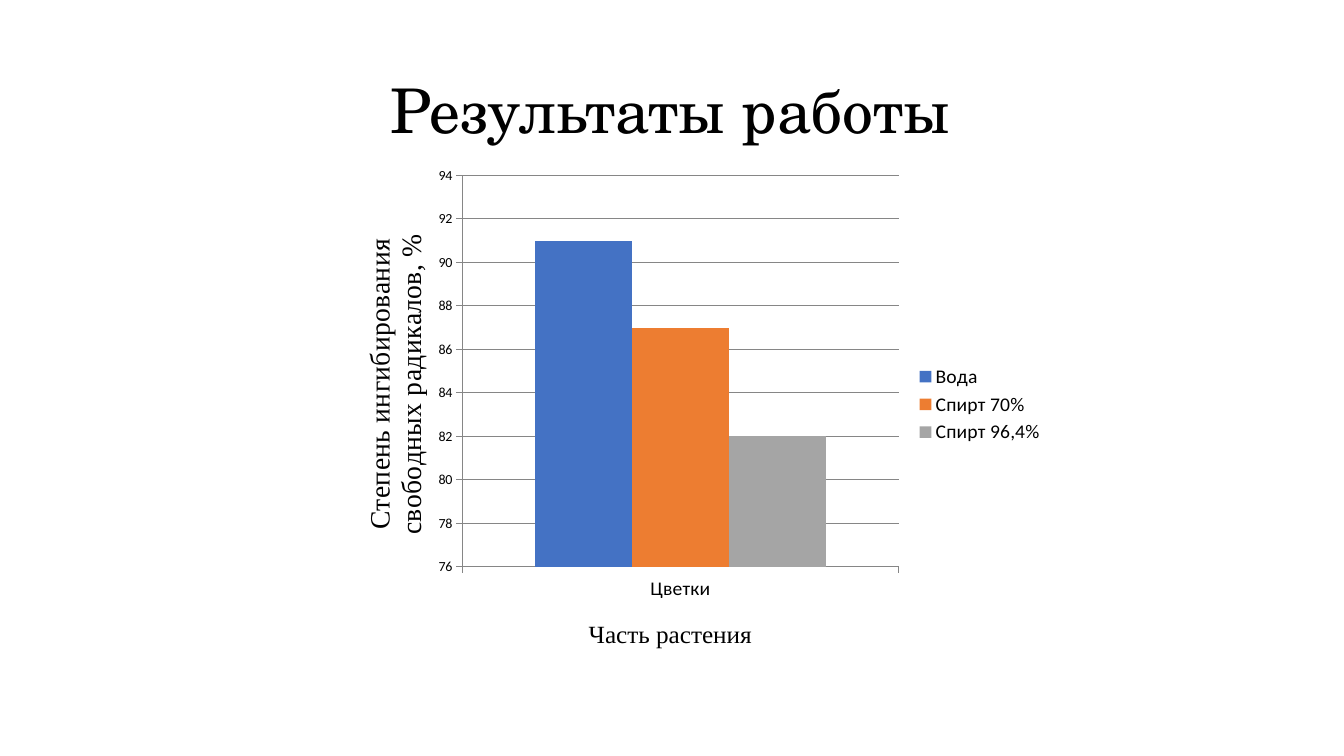
from lxml import etree
from pptx import Presentation
from pptx.chart.data import CategoryChartData
from pptx.dml.color import RGBColor
from pptx.enum.chart import XL_CHART_TYPE, XL_LEGEND_POSITION, XL_TICK_MARK
from pptx.enum.text import MSO_ANCHOR, PP_ALIGN
from pptx.oxml.ns import qn
from pptx.util import Inches, Pt

COLUMNS = XL_CHART_TYPE.COLUMN_CLUSTERED
LEGEND_RIGHT = XL_LEGEND_POSITION.RIGHT
TICK_OUTSIDE = XL_TICK_MARK.OUTSIDE
MIDDLE = MSO_ANCHOR.MIDDLE
CENTER = PP_ALIGN.CENTER

BLACK = RGBColor(0x00, 0x00, 0x00)
GRAY = RGBColor(0x86, 0x86, 0x86)
BLUE = RGBColor(0x44, 0x72, 0xC4)
ORANGE = RGBColor(0xED, 0x7D, 0x31)
SILVER = RGBColor(0xA5, 0xA5, 0xA5)

TITLE = "Результаты работы"
CATEGORIES = ["Цветки"]
SERIES = [
    ("Вода", [91], BLUE),
    ("Спирт 70%", [87], ORANGE),
    ("Спирт 96,4%", [82], SILVER),
]
CATEGORY_TITLE = "Часть растения"
VALUE_TITLE = "Степень ингибирования свободных радикалов, %"


def style_font(font, name, size):
    font.name = name
    font.size = Pt(size)
    font.bold = False
    font.color.rgb = BLACK


def set_layout(parent, index, **settings):
    """Give a chart part a manual layout as fractions of the chart."""
    for old in parent.findall(qn("c:layout")):
        parent.remove(old)
    layout = etree.Element(qn("c:layout"))
    manual = etree.SubElement(layout, qn("c:manualLayout"))
    for name, value in settings.items():
        etree.SubElement(manual, qn(f"c:{name}")).set("val", str(value))
    parent.insert(index, layout)


def style_axis(axis, title, title_size, label_size, x, y):
    axis.major_tick_mark = TICK_OUTSIDE
    axis.format.line.color.rgb = GRAY
    axis.format.line.width = Pt(0.75)
    style_font(axis.tick_labels.font, "Calibri", label_size)
    frame = axis.axis_title.text_frame
    frame.text = title
    style_font(frame.paragraphs[0].runs[0].font, "Times New Roman", title_size)
    set_layout(axis.axis_title._element, 1, xMode="edge", yMode="edge", x=x, y=y)


def add_title(page):
    box = page.shapes.add_textbox(Inches(0.9), Inches(0.4), Inches(11.5), Inches(1.45))
    frame = box.text_frame
    frame.word_wrap = True
    frame.vertical_anchor = MIDDLE
    frame.text = TITLE
    para = frame.paragraphs[0]
    para.alignment = CENTER
    para.line_spacing = 0.9
    style_font(para.runs[0].font, "TeX Gyre Schola", 44)


def add_results_chart(page):
    data = CategoryChartData()
    data.categories = CATEGORIES
    for name, values, _ in SERIES:
        data.add_series(name, values)
    chart = page.shapes.add_chart(
        COLUMNS, Inches(3.39), Inches(1.59), Inches(7.07), Inches(4.92), data
    ).chart
    chart.has_title = False
    style_font(chart.font, "Calibri", 10)

    plot = chart.plots[0]
    plot.gap_width = 150
    plot.overlap = 0
    plot.vary_by_categories = False
    for series, (_, _, color) in zip(plot.series, SERIES):
        series.format.fill.solid()
        series.format.fill.fore_color.rgb = color
    set_layout(
        chart._chartSpace.chart.plotArea, 0, layoutTarget="inner",
        xMode="edge", yMode="edge", x=0.169, y=0.031, w=0.612, h=0.802,
    )

    style_axis(chart.category_axis, CATEGORY_TITLE, 18, 14, 0.34, 0.93)
    value_axis = chart.value_axis
    style_axis(value_axis, VALUE_TITLE, 20, 10, 0.02, 0.15)
    value_axis.minimum_scale = 76
    value_axis.maximum_scale = 94
    value_axis.major_unit = 2
    value_axis.tick_labels.number_format = "0"
    value_axis.tick_labels.number_format_is_linked = False
    value_axis.has_major_gridlines = True
    value_axis.major_gridlines.format.line.color.rgb = GRAY
    value_axis.major_gridlines.format.line.width = Pt(0.75)

    chart.has_legend = True
    chart.legend.position = LEGEND_RIGHT
    chart.legend.include_in_layout = False
    style_font(chart.legend.font, "Calibri", 14)


def main():
    deck = Presentation()
    deck.slide_width = Inches(13.33)
    deck.slide_height = Inches(7.5)
    page = deck.slides.add_slide(deck.slide_layouts[6])
    add_title(page)
    add_results_chart(page)
    deck.save("out.pptx")


if __name__ == "__main__":
    main()
